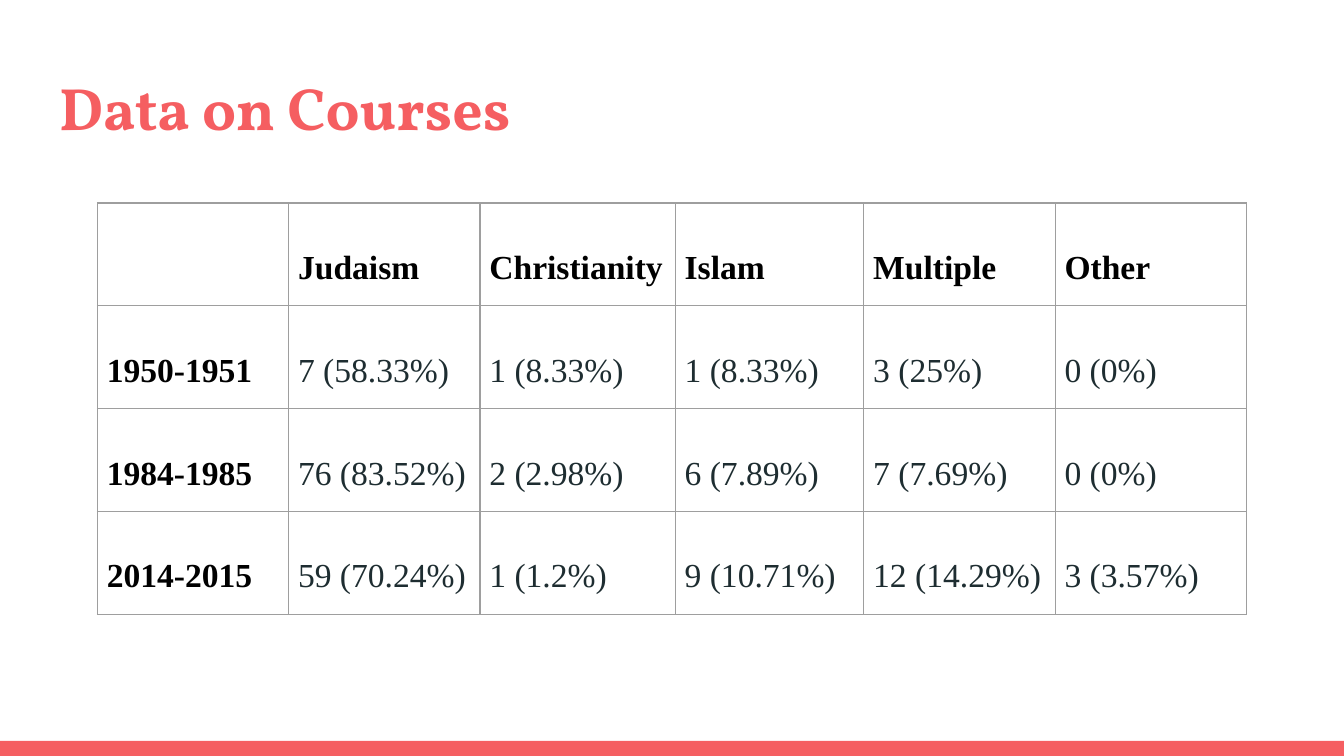
from lxml.etree import SubElement
from pptx import Presentation
from pptx.dml.color import RGBColor
from pptx.enum.shapes import MSO_SHAPE as Shape
from pptx.enum.text import MSO_ANCHOR as Anchor, PP_ALIGN as Align
from pptx.oxml.ns import qn
from pptx.util import Inches, Pt

WIDTH = 10
HEIGHT = WIDTH * 9 / 16
COLORS = {"accent": "F55E61", "heading": "000000", "value": "1E2D31",
          "border": "9E9E9E", "background": "FFFFFF"}
TABLE_WIDTH, TABLE_HEIGHT = 8.55, 3.06
COLUMN_SHARES = [1.42, 1.42, 1.45, 1.4, 1.42, 1.42]
COURSES = [
    ["", "Judaism", "Christianity", "Islam", "Multiple", "Other"],
    ["1950-1951", "7 (58.33%)", "1 (8.33%)", "1 (8.33%)", "3 (25%)", "0 (0%)"],
    ["1984-1985", "76 (83.52%)", "2 (2.98%)", "6 (7.89%)", "7 (7.69%)", "0 (0%)"],
    ["2014-2015", "59 (70.24%)", "1 (1.2%)", "9 (10.71%)", "12 (14.29%)", "3 (3.57%)"],
]


def color(name):
    return RGBColor.from_string(COLORS[name])


def style_font(font, typeface, size, color_name, bold):
    font.name, font.size, font.bold = typeface, Pt(size), bold
    font.color.rgb = color(color_name)


def set_margins(target, inches):
    target.margin_left = target.margin_right = Inches(inches)
    target.margin_top = target.margin_bottom = Inches(inches)


def add_footer_bar(slide):
    height = 0.02 * HEIGHT
    bar = slide.shapes.add_shape(Shape.RECTANGLE, 0, Inches(HEIGHT - height),
                                 Inches(WIDTH), Inches(height))
    bar.shadow.inherit = False
    bar.fill.solid()
    bar.fill.fore_color.rgb = color("accent")
    bar.line.fill.background()


def fill_title(slide, text):
    margin = 0.34
    title = slide.shapes.title
    title.left, title.top = Inches(margin), Inches(0.43)
    title.width, title.height = Inches(WIDTH - 2 * margin), Inches(0.68)
    frame = title.text_frame
    set_margins(frame, 0.1)
    frame.vertical_anchor = Anchor.TOP
    paragraph = frame.paragraphs[0]
    paragraph.alignment = Align.LEFT
    run = paragraph.add_run()
    run.text = text
    style_font(run.font, "Vollkorn", 32, "accent", True)


def add_borders(cell):
    properties = cell._tc.get_or_add_tcPr()
    for side in ("lnL", "lnR", "lnT", "lnB"):
        line = SubElement(properties, qn(f"a:{side}"), w=str(Pt(0.75)))
        fill = SubElement(line, qn("a:solidFill"))
        SubElement(fill, qn("a:srgbClr"), val=COLORS["border"])


def fill_cell(cell, text, is_heading):
    set_margins(cell, 0.07)
    add_borders(cell)
    cell.fill.background()
    paragraph = cell.text_frame.paragraphs[0]
    paragraph.line_spacing = 2.0
    paragraph.font.size = Pt(18)
    if text:
        run = paragraph.add_run()
        run.text = text
        style_font(run.font, "Times New Roman", 18,
                   "heading" if is_heading else "value", is_heading)


def add_course_table(slide, rows):
    frame = slide.shapes.add_table(
        len(rows), len(COLUMN_SHARES), Inches((WIDTH - TABLE_WIDTH) / 2),
        Inches(1.51), Inches(TABLE_WIDTH), Inches(TABLE_HEIGHT))
    table = frame.table
    table.first_row = table.horz_banding = False
    for column, share in zip(table.columns, COLUMN_SHARES):
        column.width = Inches(TABLE_WIDTH * share / sum(COLUMN_SHARES))
    for row_index, row in enumerate(rows):
        for column_index, text in enumerate(row):
            fill_cell(table.cell(row_index, column_index), text,
                      row_index == 0 or column_index == 0)


def main():
    """Build the slide with the course table and save it."""
    presentation = Presentation()
    presentation.slide_width = Inches(WIDTH)
    presentation.slide_height = Inches(HEIGHT)
    slide = presentation.slides.add_slide(presentation.slide_layouts[5])
    slide.background.fill.solid()
    slide.background.fill.fore_color.rgb = color("background")
    add_footer_bar(slide)
    add_course_table(slide, COURSES)
    fill_title(slide, "Data on Courses")
    presentation.save("out.pptx")


if __name__ == "__main__":
    main()
